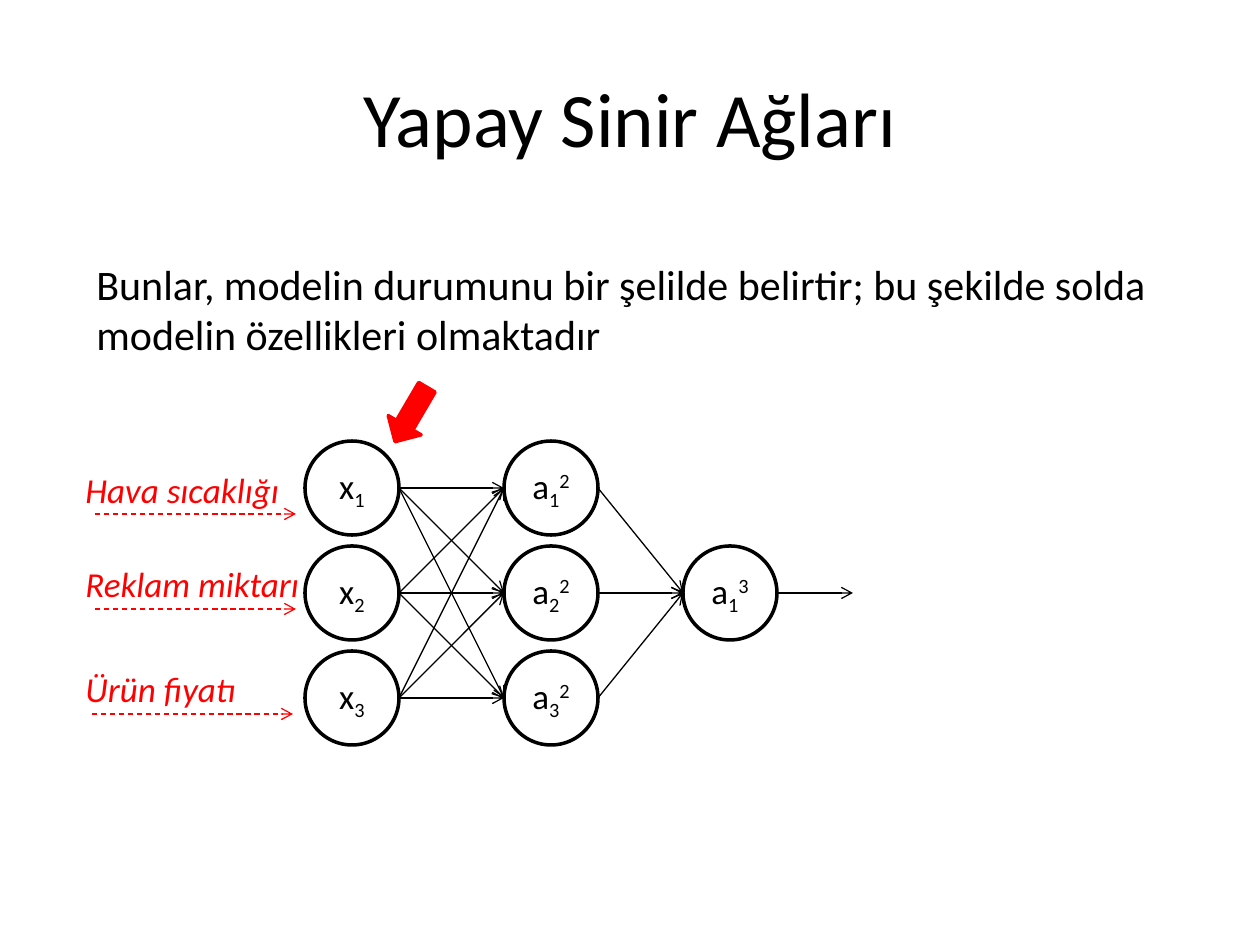
from itertools import product

from lxml.etree import SubElement
from pptx import Presentation
from pptx.dml.color import RGBColor
from pptx.enum.dml import MSO_LINE
from pptx.enum.shapes import MSO_CONNECTOR, MSO_SHAPE
from pptx.enum.text import MSO_ANCHOR, PP_ALIGN
from pptx.oxml.ns import qn
from pptx.util import Pt

PX = 914400 // 126
BLACK, WHITE, RED = "000000", "FFFFFF", "FF0000"
FONT = "Calibri"

NODE = 94                       # neuron diameter
ROWS = [441, 546, 651]          # neuron tops
INPUT_X, HIDDEN_X, OUTPUT_X = 305, 504, 683


def px(*lengths):
    return [length * PX for length in lengths]


def rgb(hex_color):
    return RGBColor.from_string(hex_color)


def style_paragraph(paragraph, size, color=BLACK, italic=None, align=None):
    font = paragraph.font
    font.name, font.size, font.italic = FONT, Pt(size), italic
    font.color.rgb = rgb(color)
    paragraph.alignment = align


def add_text(slide, text, box, size, wrap=True, anchor=MSO_ANCHOR.TOP, **style):
    frame = slide.shapes.add_textbox(*px(*box)).text_frame
    frame.word_wrap = wrap
    frame.vertical_anchor = anchor
    frame.text = text
    style_paragraph(frame.paragraphs[0], size, **style)


def add_filled(slide, kind, box, fill, line):
    shape = slide.shapes.add_shape(kind, *px(*box))
    shape.shadow.inherit = False
    shape.fill.solid()
    shape.fill.fore_color.rgb = rgb(fill)
    shape.line.color.rgb = rgb(line)
    shape.line.width = Pt(2)
    return shape


def add_neuron(slide, left, top, letter, subscript, superscript=""):
    neuron = add_filled(slide, MSO_SHAPE.OVAL, (left, top, NODE, NODE), WHITE, BLACK)
    frame = neuron.text_frame
    frame.word_wrap = False
    frame.vertical_anchor = MSO_ANCHOR.MIDDLE
    label = frame.paragraphs[0]
    style_paragraph(label, 20, align=PP_ALIGN.CENTER)
    for text, baseline in ((letter, 0), (subscript, -25000), (superscript, 30000)):
        if text:
            run = label.add_run()
            run.text = text
            if baseline:
                run._r.get_or_add_rPr().set("baseline", str(baseline))


def add_arrow(slide, start, end, color=BLACK, dashed=False):
    arrow = slide.shapes.add_connector(MSO_CONNECTOR.STRAIGHT, *px(*start, *end))
    arrow.line.color.rgb = rgb(color)
    arrow.line.width = Pt(0.75)
    if dashed:
        arrow.line.dash_style = MSO_LINE.DASH
    SubElement(arrow.line._get_or_add_ln(), qn("a:tailEnd"), type="arrow")
    SubElement(arrow._element.spPr, qn("a:effectLst"))


def add_network(slide):
    # Neurons, layer by layer
    for number, top in enumerate(ROWS, 1):
        add_neuron(slide, INPUT_X, top, "x", str(number))
    for number, top in enumerate(ROWS, 1):
        add_neuron(slide, HIDDEN_X, top, "a", str(number), "2")
    add_neuron(slide, OUTPUT_X, ROWS[1], "a", "1", "3")

    # Links between layers
    centers = [top + NODE // 2 for top in ROWS]
    middle = centers[1]
    for source, target in product(centers, centers):
        add_arrow(slide, (INPUT_X + NODE, source), (HIDDEN_X, target))
    for source in centers:
        add_arrow(slide, (HIDDEN_X + NODE, source), (OUTPUT_X, middle))
    add_arrow(slide, (OUTPUT_X + NODE, middle), (853, middle))


def add_features(slide):
    # Feature name, its top and width, start and height of its arrow
    features = [
        ("Hava sıcaklığı", 462, 220, 95, 514),
        ("Reklam miktarı", 556, 242, 95, 609),
        ("Ürün fiyatı", 661, 178, 92, 714),
    ]
    for name, top, width, arrow_x, arrow_y in features:
        add_text(slide, name, (73, top, width, 55), 20, wrap=False, color=RED, italic=True)
        add_arrow(slide, (arrow_x, arrow_y), (arrow_x + 201, arrow_y), RED, dashed=True)


def main():
    deck = Presentation()
    deck.slide_width, deck.slide_height = px(1260, 945)
    slide = deck.slides.add_slide(deck.slide_layouts[6])

    # Title and explanation
    add_text(slide, "Yapay Sinir Ağları", (63, 38, 1134, 157), 44,
             anchor=MSO_ANCHOR.MIDDLE, align=PP_ALIGN.CENTER)
    add_text(slide, "Bunlar, modelin durumunu bir şelilde belirtir; bu şekilde solda "
             "modelin özellikleri olmaktadır", (84, 252, 1113, 115), 24)

    add_network(slide)
    add_features(slide)

    # Pointer to the input layer
    pointer = add_filled(slide, MSO_SHAPE.DOWN_ARROW, (392, 383, 38, 63), RED, RED)
    pointer.rotation = 30.4

    deck.save("out.pptx")


if __name__ == "__main__":
    main()
